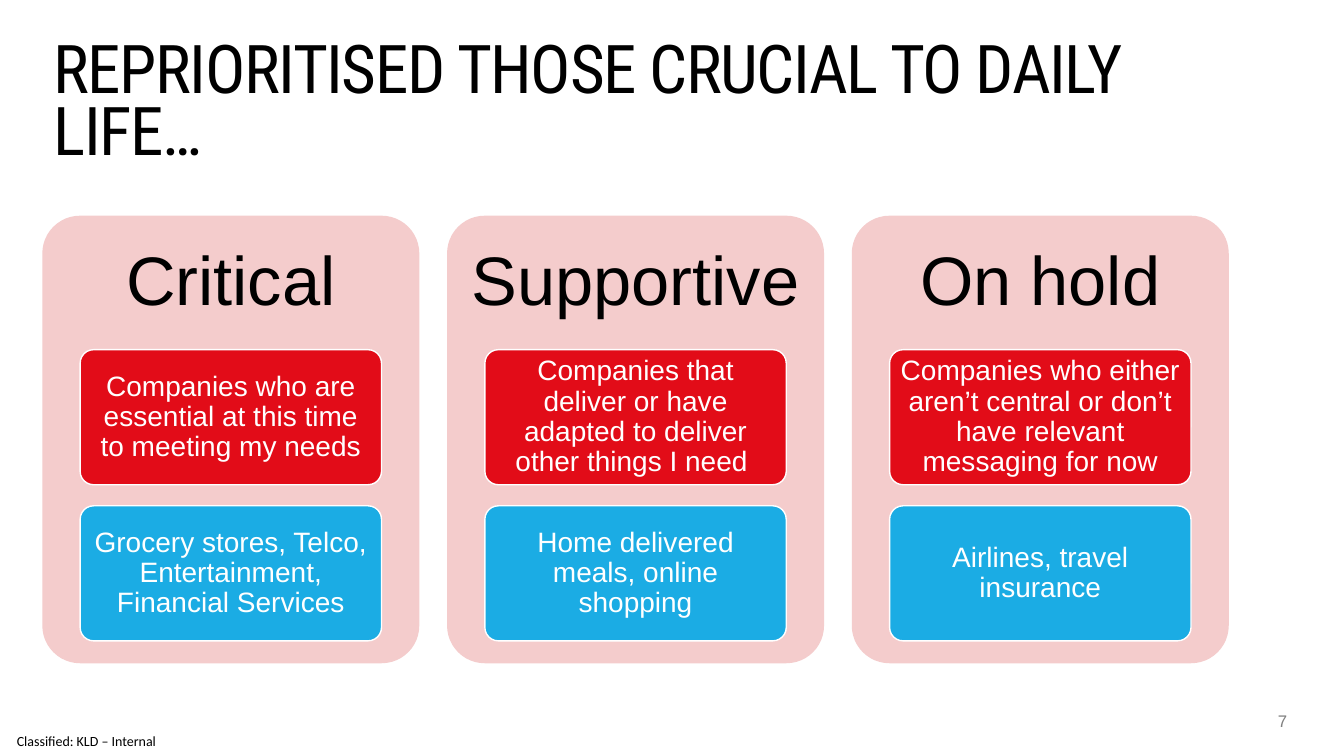
from dataclasses import dataclass

from pptx import Presentation
from pptx.dml.color import RGBColor
from pptx.enum.shapes import MSO_SHAPE
from pptx.enum.text import MSO_ANCHOR, MSO_AUTO_SIZE, PP_ALIGN
from pptx.shapes.autoshape import Shape
from pptx.slide import Slide
from pptx.text.text import TextFrame
from pptx.util import Pt

BLACK, WHITE, GREY = "000000", "FFFFFF", "808080"
PINK, RED, BLUE = "F4CCCC", "E20C18", "1BACE4"

PANEL_LEFT, PANEL_TOP, PANEL_STEP = 30.24, 154.1, 289.1
PANEL_WIDTH, PANEL_HEIGHT, HEADING_HEIGHT = 269.3, 319.7, 95.9
TILE_INDENT, TILE_TOP, TILE_STEP = 27, 249.8, 111.5
TILE_WIDTH, TILE_HEIGHT = 215.3, 96.5


@dataclass
class Group:
    heading: str
    meaning: str
    examples: str


@dataclass
class Area:
    left: float
    top: float
    width: float
    height: float


GROUPS = [
    Group("Critical",
          "Companies who are essential at this time to meeting my needs",
          "Grocery stores, Telco, Entertainment, Financial Services"),
    Group("Supportive",
          "Companies that deliver or have adapted to deliver other things I need ",
          "Home delivered meals, online shopping"),
    Group("On hold",
          "Companies who either aren’t central or don’t have relevant messaging for now",
          "Airlines, travel insurance"),
]


def color(hex_value: str) -> RGBColor:
    return RGBColor.from_string(hex_value)


def write(frame: TextFrame, text: str, size: float, text_color: str,
          font: str = "Arial", align: PP_ALIGN = PP_ALIGN.LEFT,
          anchor: MSO_ANCHOR = MSO_ANCHOR.TOP, line_spacing=1.0,
          margins: tuple = (0, 0, 0, 0)) -> None:
    """Fill a frame with one run; margins are left, top, right, bottom."""
    left, top, right, bottom = map(Pt, margins)
    frame_format = {
        "word_wrap": True, "auto_size": MSO_AUTO_SIZE.NONE,
        "vertical_anchor": anchor, "margin_left": left, "margin_top": top,
        "margin_right": right, "margin_bottom": bottom,
    }
    for name, value in frame_format.items():
        setattr(frame, name, value)
    para = frame.paragraphs[0]
    para.alignment, para.line_spacing = align, line_spacing
    span = para.add_run()
    span.text = text
    for name, value in {"name": font, "size": Pt(size), "bold": False}.items():
        setattr(span.font, name, value)
    span.font.color.rgb = color(text_color)


def add_rounded(page: Slide, area: Area, fill: str, outline: str = "") -> Shape:
    box = page.shapes.add_shape(
        MSO_SHAPE.ROUNDED_RECTANGLE,
        Pt(area.left), Pt(area.top), Pt(area.width), Pt(area.height))
    box.adjustments[0] = 0.1
    box.shadow.inherit = False
    box.fill.solid()
    box.fill.fore_color.rgb = color(fill)
    if outline:
        box.line.color.rgb = color(outline)
        box.line.width = Pt(1)
    else:
        box.line.fill.background()
    return box


def add_label(page: Slide, area: Area, text: str, size: float,
              text_color: str, **text_format) -> None:
    box = page.shapes.add_textbox(
        Pt(area.left), Pt(area.top), Pt(area.width), Pt(area.height))
    write(box.text_frame, text, size, text_color, **text_format)


def add_title(page: Slide, text: str) -> None:
    title = page.shapes.title
    place = {"left": 38.2, "top": 32.4, "width": 878.4, "height": 37.4}
    for name, value in place.items():
        setattr(title, name, Pt(value))
    write(title.text_frame, text, 48, BLACK, font="Roboto Condensed",
          line_spacing=Pt(44))
    span = title.text_frame.paragraphs[0].runs[0]
    span.font._element.set("spc", "-100")


def add_group(page: Slide, group: Group, left: float) -> None:
    centred = {"align": PP_ALIGN.CENTER, "anchor": MSO_ANCHOR.MIDDLE,
               "line_spacing": 0.9}
    panel = add_rounded(
        page, Area(left, PANEL_TOP, PANEL_WIDTH, PANEL_HEIGHT), PINK)
    write(panel.text_frame, group.heading, 49, BLACK,
          margins=(0, 0, 0, PANEL_HEIGHT - HEADING_HEIGHT), **centred)
    tiles = [(group.meaning, RED), (group.examples, BLUE)]
    for row, (text, fill) in enumerate(tiles):
        area = Area(left + TILE_INDENT, TILE_TOP + row * TILE_STEP,
                    TILE_WIDTH, TILE_HEIGHT)
        tile = add_rounded(page, area, fill, WHITE)
        write(tile.text_frame, text, 20, WHITE, margins=(4, 3, 4, 3), **centred)


def main() -> None:
    deck = Presentation()
    deck.slide_width, deck.slide_height = Pt(960), Pt(540)
    page = deck.slides.add_slide(deck.slide_layouts[5])
    add_title(page, "REPRIORITISED THOSE CRUCIAL TO DAILY LIFE…")
    for column, group in enumerate(GROUPS):
        add_group(page, group, PANEL_LEFT + column * PANEL_STEP)
    add_label(page, Area(0, 519.1, 128.2, 20.9), "Classified: KLD – Internal",
              10, BLACK, font="Calibri", anchor=MSO_ANCHOR.MIDDLE,
              margins=(12, 0, 0, 0))
    add_label(page, Area(885.6, 507.6, 33.8, 14.4), "7", 12, GREY,
              align=PP_ALIGN.RIGHT)
    deck.save("out.pptx")


if __name__ == "__main__":
    main()
